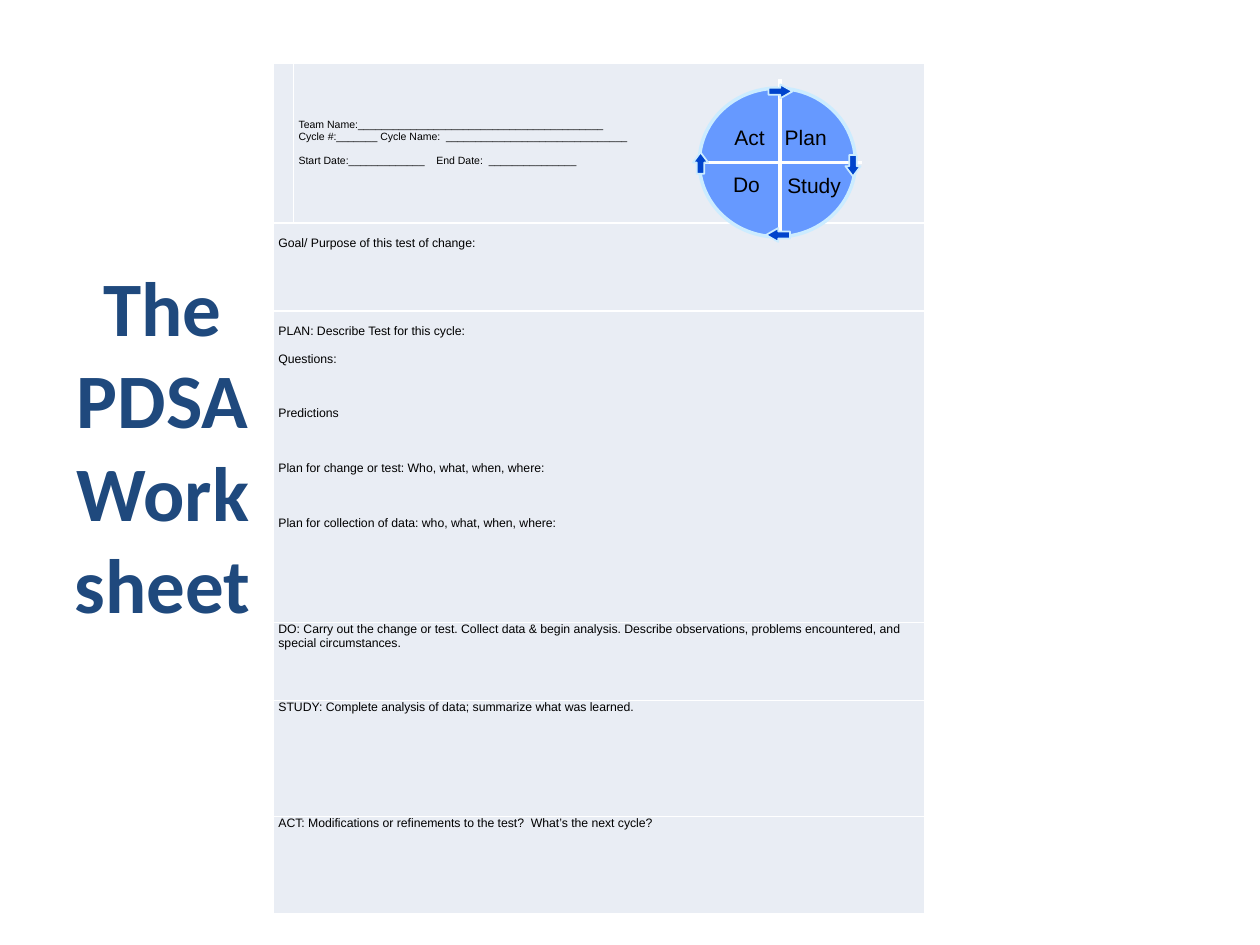
from lxml import etree
from pptx import Presentation
from pptx.dml.color import RGBColor
from pptx.enum import shapes, text
from pptx.oxml import ns
from pptx.util import Inches, Pt

NAVY = RGBColor(0x1F, 0x49, 0x7D)
BLACK = RGBColor(0, 0, 0)
WHITE = RGBColor(255, 255, 255)
CELL = RGBColor(0xE9, 0xED, 0xF4)
WHEEL = RGBColor(0x66, 0x99, 0xFF)
ARROW = RGBColor(0x00, 0x44, 0xCC)
RIM = RGBColor(0xCC, 0xEC, 0xFF)

COLUMNS = [0.16, 5.01]
ROWS = [1.27, 0.7, 2.47, 0.62, 0.92, 0.77]
LINE_PT = 7.8
HEADER = [
    ("Team Name:" + "_" * 42, 0),
    ("Cycle #:_______ Cycle Name:  " + "_" * 31, 0),
    ("Start Date:_____________    End Date:  _______________", 6.9),
]
SECTIONS = [
    [("Goal/ Purpose of this test of change:", 6)],
    [
        ("PLAN: Describe Test for this cycle:", 6),
        ("Questions:", LINE_PT),
        ("Predictions", 3 * LINE_PT),
        ("Plan for change or test: Who, what, when, where:", 3 * LINE_PT),
        ("Plan for collection of data: who, what, when, where:", 3 * LINE_PT),
    ],
    [("DO: Carry out the change or test. Collect data & begin analysis. "
      "Describe observations, problems encountered, and special circumstances.", 0)],
    [("STUDY: Complete analysis of data; summarize what was learned.", 0)],
    [("ACT: Modifications or refinements to the test?  What’s the next cycle?", 0)],
]
ARROWS = [
    (shapes.MSO_SHAPE.DOWN_ARROW, 6.71, 1.23, 0.12, 0.17, 0.67),
    (shapes.MSO_SHAPE.RIGHT_ARROW, 6.1, 0.67, 0.19, 0.11, 0.88),
    (shapes.MSO_SHAPE.LEFT_ARROW, 6.08, 1.81, 0.19, 0.11, 0.88),
    (shapes.MSO_SHAPE.UP_ARROW, 5.5, 1.21, 0.12, 0.17, 0.67),
]
LABELS = [
    ("Act", 5.73, 0.94, 0.48),
    ("Plan", 6.13, 0.94, 0.57),
    ("Do", 5.72, 1.31, 0.48),
    ("Study", 6.15, 1.32, 0.67),
]


def box(*lengths):
    return [Inches(n) for n in lengths]


def format_runs(p, name, size, color, bold=False):
    for r in p.runs:
        r.font.name = name
        r.font.size = Pt(size)
        r.font.bold = bold
        r.font.color.rgb = color


def set_title(s):
    title = s.shapes.title
    title.left, title.top, title.width, title.height = box(0.5, 0.3, 1.58, 6.45)
    tf = title.text_frame
    tf.text = "The PDSA Worksheet"
    tf.word_wrap = True
    tf.auto_size = text.MSO_AUTO_SIZE.NONE
    tf.vertical_anchor = text.MSO_ANCHOR.MIDDLE
    tf.margin_left = tf.margin_right = Inches(0.08)
    p = tf.paragraphs[0]
    p.alignment = text.PP_ALIGN.CENTER
    format_runs(p, "Calibri", 44, NAVY, True)


def style_cell(cell):
    cell.margin_left = cell.margin_right = Inches(0.04)
    cell.margin_top = cell.margin_bottom = 0
    tc_pr = cell._tc.get_or_add_tcPr()
    for side in ("lnL", "lnR", "lnT", "lnB"):
        ln = etree.SubElement(tc_pr, ns.qn("a:" + side), w=str(Pt(1)))
        fill = etree.SubElement(ln, ns.qn("a:solidFill"))
        etree.SubElement(fill, ns.qn("a:srgbClr"), val=str(WHITE))
    cell.fill.solid()
    cell.fill.fore_color.rgb = CELL


def fill_cell(cell, lines, size):
    tf = cell.text_frame
    tf.text = "\n".join(line for line, _ in lines)
    for p, (_, before) in zip(tf.paragraphs, lines):
        p.space_before = Pt(before)
        format_runs(p, "Arial", size, BLACK)


def add_worksheet(s):
    frame = s.shapes.add_table(len(ROWS), len(COLUMNS), *box(2.17, 0.5, sum(COLUMNS), sum(ROWS)))
    table = frame.table
    table.first_row = table.horz_banding = False
    for column, width in zip(table.columns, COLUMNS):
        column.width = Inches(width)
    for row, height in zip(table.rows, ROWS):
        row.height = Inches(height)
        for cell in row.cells:
            style_cell(cell)
    header = table.cell(0, 1)
    header.vertical_anchor = text.MSO_ANCHOR.MIDDLE
    fill_cell(header, HEADER, 6)
    for i, lines in enumerate(SECTIONS, 1):
        cell = table.cell(i, 0)
        cell.merge(table.cell(i, 1))
        fill_cell(cell, lines, 7)
        if lines[0][1]:
            cell.text_frame.paragraphs[0].line_spacing = 2.0


def add_filled(group, kind, at, fill, line_pt):
    sp = group.shapes.add_shape(kind, *box(*at))
    sp.shadow.inherit = False
    sp.fill.solid()
    sp.fill.fore_color.rgb = fill
    sp.line.color.rgb = RIM
    sp.line.width = Pt(line_pt)
    return sp


def add_spoke(group, *ends):
    line = group.shapes.add_connector(shapes.MSO_CONNECTOR.STRAIGHT, *box(*ends))
    line.line.color.rgb = WHITE
    line.line.width = Pt(2)
    etree.SubElement(line._element.spPr, ns.qn("a:effectLst"))


def add_wheel(s):
    group = s.shapes.add_group_shape()
    add_filled(group, shapes.MSO_SHAPE.OVAL, (5.55, 0.7, 1.24, 1.18), WHEEL, 2)
    add_spoke(group, 6.19, 0.63, 6.19, 1.88)
    add_spoke(group, 5.54, 1.29, 6.84, 1.29)
    for kind, left, top, width, height, head in ARROWS:
        sp = add_filled(group, kind, (left, top, width, height), ARROW, 1)
        sp.adjustments[0] = 0.5
        sp.adjustments[1] = head


def add_label(s, label, left, top, width):
    tf = s.shapes.add_textbox(*box(left, top, width, 0.3)).text_frame
    tf.text = label
    tf.word_wrap = True
    tf.auto_size = text.MSO_AUTO_SIZE.SHAPE_TO_FIT_TEXT
    format_runs(tf.paragraphs[0], "Arial", 12, BLACK)


def main():
    prs = Presentation()
    prs.slide_width, prs.slide_height = box(10, 7.5)
    s = prs.slides.add_slide(prs.slide_layouts[5])
    set_title(s)
    add_worksheet(s)
    add_wheel(s)
    for label in LABELS:
        add_label(s, *label)
    prs.save("out.pptx")


if __name__ == "__main__":
    main()
